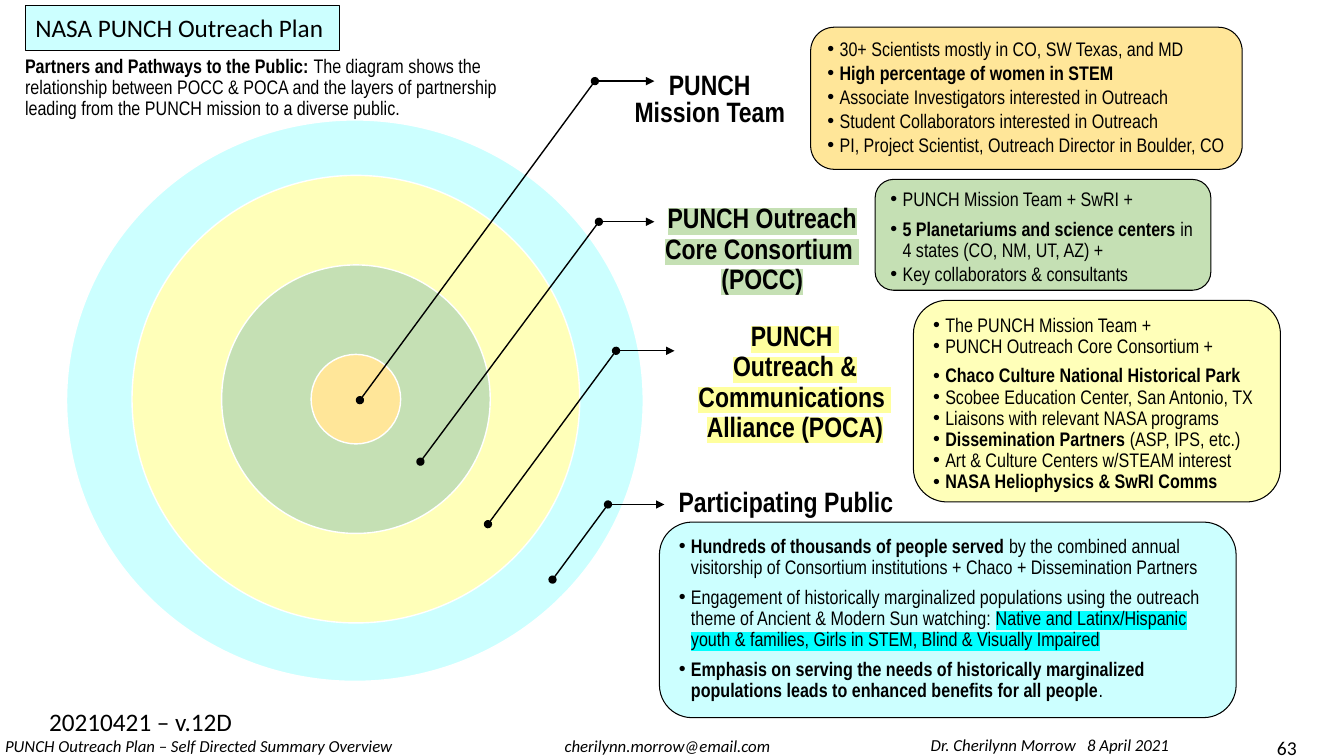
import lxml.etree
import pptx
import pptx.dml.color
import pptx.enum.shapes
import pptx.enum.text
import pptx.oxml.ns
import pptx.util

SHAPE = pptx.enum.shapes.MSO_SHAPE
ALIGN = pptx.enum.text.PP_ALIGN
ANCHOR = pptx.enum.text.MSO_ANCHOR
SKY, CREAM, GREEN, GOLD = "CCFFFF", "FFFFB9", "C5E0B4", "FFE699"
BLACK, WHITE, CYAN, LEMON = "000000", "FFFFFF", "00FFFF", "FFFF9E"
NARROW, CALIBRI = "Arial Narrow", "Calibri"


def color(value):
    return pptx.dml.color.RGBColor.from_string(value)


def grid(cells):
    return pptx.util.Inches(cells / 10)


def add_xml(parent, tag, **attributes):
    return lxml.etree.SubElement(parent, pptx.oxml.ns.qn(tag), attributes)


def plain(text, highlight=None):
    return text, False, highlight


def bold(text, highlight=None):
    return text, True, highlight


class OutreachPage:
    """Draws the page elements on a grid of tenth-inch columns and rows."""

    def __init__(self, deck):
        self.page = deck.slides.add_slide(deck.slide_layouts[5])

    def style(self, shape, fill, line, width):
        shape.fill.solid()
        shape.fill.fore_color.rgb = color(fill)
        shape.line.color.rgb = color(line)
        shape.line.width = pptx.util.Pt(width)

    def fill_text(self, shape, paragraphs, size, font=NARROW, align=ALIGN.LEFT, spacing=0.9,
                  after=(), bullets=False, italic=False, anchor=ANCHOR.TOP,
                  insets=(1, 0.5), wrap=True):
        frame = shape.text_frame
        frame.auto_size = pptx.enum.text.MSO_AUTO_SIZE.NONE
        frame.word_wrap = wrap
        frame.vertical_anchor = anchor
        frame.margin_left = grid(insets[0])
        frame.margin_right = grid(min(insets))
        frame.margin_top = frame.margin_bottom = grid(insets[1])
        for index, spans in enumerate(paragraphs):
            para = frame.add_paragraph() if index else frame.paragraphs[0]
            para.alignment = align
            para.line_spacing = spacing
            if bullets:
                properties = para._p.get_or_add_pPr()
                properties.set("marL", str(grid(1.2)))
                properties.set("indent", str(-grid(1.2)))
                add_xml(properties, "a:buFont", typeface="Arial")
                add_xml(properties, "a:buChar", char="•")
            if after:
                para.space_after = pptx.util.Pt(after[index])
            para.font.name = font
            para.font.size = pptx.util.Pt(size)
            para.font.color.rgb = color(BLACK)
            para.font.italic = italic
            uniform = len({heavy for _, heavy, _ in spans}) == 1
            if uniform:
                para.font.bold = spans[0][1]
            for text, heavy, highlight in spans:
                span = para.add_run()
                span.text = text
                if not uniform:
                    span.font.bold = heavy
                if highlight:
                    mark = add_xml(span._r.get_or_add_rPr(), "a:highlight")
                    add_xml(mark, "a:srgbClr", val=highlight)

    def title(self, text, left, top, width, height):
        box = self.page.shapes.title
        box.left, box.top, box.width, box.height = map(grid, (left, top, width, height))
        geometry = add_xml(box.element.spPr, "a:prstGeom", prst="roundRect")
        add_xml(geometry, "a:avLst")
        self.style(box, SKY, BLACK, 0.75)
        self.fill_text(box, [[plain(text)]], 18, CALIBRI, spacing=1, anchor=ANCHOR.MIDDLE,
                       wrap=False)

    def circle(self, center, width, height, fill):
        box = self.page.shapes.add_shape(
            SHAPE.OVAL, grid(center[0] - width / 2), grid(center[1] - height / 2),
            grid(width), grid(height))
        box.shadow.inherit = False
        self.style(box, fill, WHITE, 1)

    def card(self, place, fill, paragraphs, after):
        box = self.page.shapes.add_shape(SHAPE.ROUNDED_RECTANGLE, *map(grid, place))
        box.shadow.inherit = False
        self.style(box, fill, BLACK, 0.75)
        self.fill_text(box, paragraphs, 14, after=after, bullets=True)

    def text(self, place, paragraphs, size, **options):
        box = self.page.shapes.add_textbox(*map(grid, place))
        self.fill_text(box, paragraphs, size, **options)

    def label(self, place, lines, highlight=None, spacing=0.9):
        self.text(place, [[bold(line, highlight)] for line in lines], 20,
                  align=ALIGN.CENTER, spacing=spacing, anchor=ANCHOR.MIDDLE,
                  insets=(1.6, 0.3))

    def line(self, start, end, **ends):
        connector = self.page.shapes.add_connector(
            pptx.enum.shapes.MSO_CONNECTOR.STRAIGHT, *map(grid, start + end))
        connector.line.color.rgb = color(BLACK)
        connector.line.width = pptx.util.Pt(1)
        properties = connector.element.spPr
        outline = properties.find(pptx.oxml.ns.qn("a:ln"))
        for tag, kind in ends.items():
            add_xml(outline, "a:" + tag, type=kind)
        add_xml(properties, "a:effectLst")

    def pointer(self, foot, elbow, tip):
        self.line(elbow, (tip, elbow[1]), tailEnd="triangle")
        self.line(elbow, foot, headEnd="oval", tailEnd="oval")


def main():
    deck = pptx.Presentation()
    deck.slide_width, deck.slide_height = grid(133.3), grid(75)
    page = OutreachPage(deck)
    page.title("NASA PUNCH Outreach Plan", 2.5, 0.5, 31.2, 4.5)

    page.circle((35.2, 39.75), 57.2, 55.7, SKY)
    for step, fill in ((5, CREAM), (3, GREEN), (1, GOLD)):
        page.circle((35.3, 39.6), 8.88 * step, 8.88 * step, fill)

    page.label((60.7, 3.5, 18.1, 13), ["PUNCH", "Mission Team"], spacing=0.8)
    page.label((57.2, 18.3, 35.5, 13), ["PUNCH Outreach", "Core Consortium ", "(POCC)"], GREEN)
    page.label((64.1, 31.5, 28.2, 13),
               ["PUNCH ", "Outreach & Communications ", "Alliance (POCA)"], LEMON)
    page.label((63.2, 46.8, 28.2, 6.2), ["Participating Public"])
    for foot, elbow, tip in (
            ((35.7, 39.7), (59, 8.05), 64.9),
            ((41.7, 45.8), (59.4, 22), 64.9),
            ((48.4, 52), (61.1, 34.8), 66.9),
            ((54.8, 57.5), (60.3, 50.05), 65.9)):
        page.pointer(foot, elbow, tip)

    page.card((80.4, 2.7, 42.8, 14.1), GOLD, [
        [plain("30+ Scientists mostly in CO, SW Texas, and MD")],
        [bold("High percentage of women in STEM")],
        [plain("Associate Investigators interested in Outreach")],
        [plain("Student Collaborators interested in Outreach")],
        [plain("PI, Project Scientist, Outreach Director in Boulder, CO")],
    ], [2] * 5)
    page.card((86.8, 17.8, 33.3, 11), GREEN, [
        [plain("PUNCH Mission Team + SwRI +")],
        [bold("5 Planetariums and science centers "), plain("in 4 states (CO, NM, UT, AZ) +")],
        [plain("Key collaborators & consultants")],
    ], [6, 2, 0])
    page.card((90.6, 29.8, 36.4, 20), CREAM, [
        [plain("The PUNCH Mission Team +")],
        [plain("PUNCH Outreach Core Consortium +")],
        [bold("Chaco Culture National Historical Park")],
        [plain("Scobee Education Center, San Antonio, TX")],
        [plain("Liaisons with relevant NASA programs")],
        [bold("Dissemination Partners "), plain("(ASP, IPS, etc.)")],
        [plain("Art & Culture Centers w/STEAM interest")],
        [bold("NASA Heliophysics & SwRI Comms")],
    ], [0, 6] + [0] * 6)
    page.card((65.4, 51.8, 57.2, 19.4), SKY, [
        [bold("Hundreds of thousands of people served "),
         plain("by the combined annual visitorship of Consortium institutions "
               "+ Chaco + Dissemination Partners")],
        [plain("Engagement of historically marginalized populations using the outreach "
               "theme of Ancient & Modern Sun watching: "),
         plain("Native and Latinx/Hispanic youth & families, Girls in STEM, "
               "Blind & Visually Impaired", CYAN)],
        [bold("Emphasis on serving the needs of historically marginalized populations "
              "leads to enhanced benefits for all people"), plain(".")],
    ], [6] * 3)

    page.text((1.5, 5.1, 49.7, 6.9), [[
        bold("Partners and Pathways to the Public: "),
        plain("The diagram shows the relationship between POCC & POCA and the layers of "
              "partnership leading from the PUNCH mission to a diverse public.")]], 14)
    page.text((3.9, 69.6, 21, 4), [[plain("20210421 – v.12D")]], 18, font=CALIBRI, spacing=1)
    page.text((124.7, 72, 4.9, 3), [[plain("63")]], 14, font=CALIBRI, spacing=1,
              align=ALIGN.RIGHT, insets=(1, 1))
    for place, text, align in (
            ((0, 72.5, 40.9, 3), "PUNCH Outreach Plan – Self Directed Summary Overview", ALIGN.LEFT),
            ((48.8, 72.5, 34.8, 3), "cherilynn.morrow@email.com", ALIGN.CENTER),
            ((88.3, 72.4, 31.7, 3), "Dr. Cherilynn Morrow   8 April 2021", ALIGN.CENTER)):
        page.text(place, [[plain(text)]], 12, font=CALIBRI, spacing=1, align=align,
                  italic=True, insets=(0.5, 0.5))
    deck.save("out.pptx")


if __name__ == "__main__":
    main()
